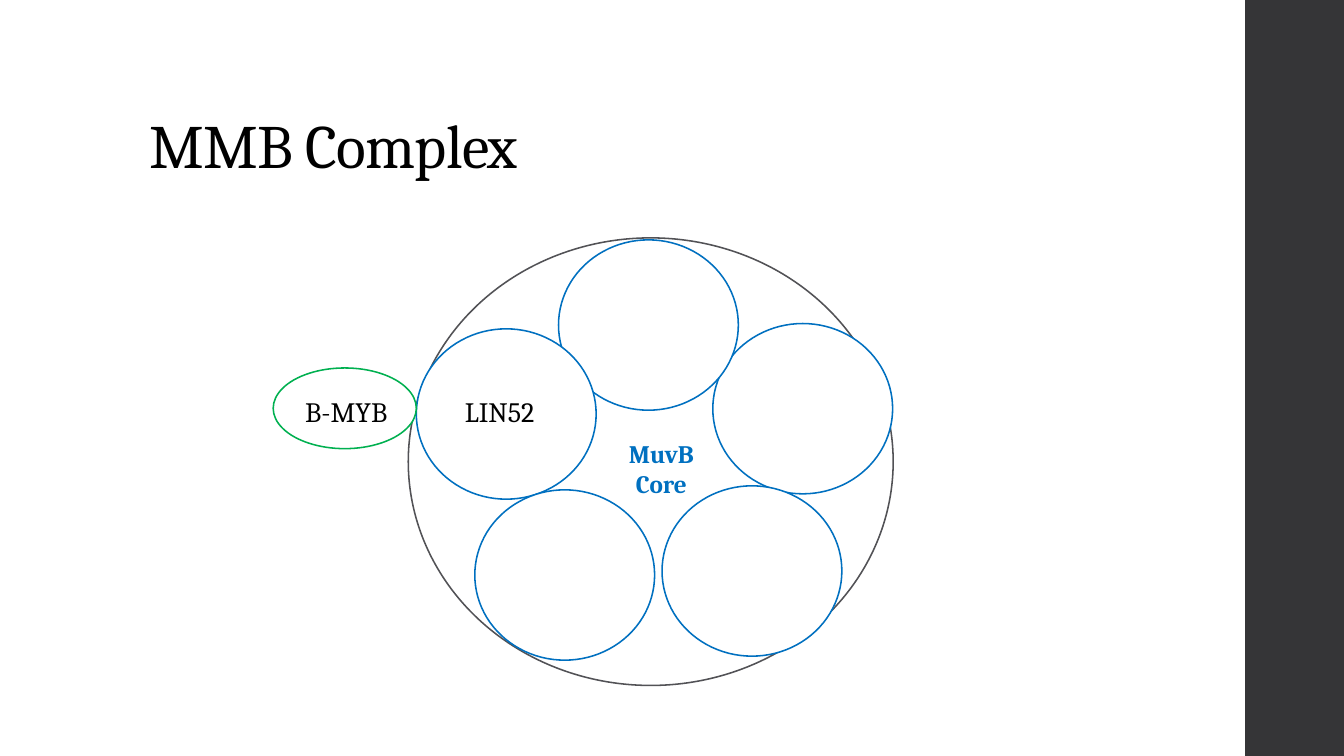
from pptx import Presentation
from pptx import util as u
from pptx.dml.color import RGBColor
from pptx.enum import shapes, text

BLACK, WHITE, BLUE, GREEN = "000000", "FFFFFF", "0070C0", "00B050"
GREY, DARK = "525256", "353537"


def rgb(hex_color):
    return RGBColor.from_string(hex_color)


class Deck:
    """Holds the style and current slide; boxes are (x, y, w, h) in percent of the slide."""

    font = "Cambria"
    line_width = u.Pt(1.1)

    def __init__(self):
        self.prs = Presentation()
        self.prs.slide_width, self.prs.slide_height = u.Inches(13.33), u.Inches(7.5)
        self.s = self.prs.slides.add_slide(self.prs.slide_layouts[5])

    def place(self, box):
        """Turn a percent box into slide lengths."""
        sides = (self.prs.slide_width, self.prs.slide_height) * 2
        return [int(share * side / 100) for share, side in zip(box, sides)]

    def style(self, p, size, color, bold=False):
        for r in p.runs:
            r.font.name, r.font.size, r.font.bold = self.font, u.Pt(size), bold
            r.font.color.rgb = rgb(color)

    def title(self, words, box):
        sp = self.s.shapes.title
        sp.left, sp.top, sp.width, sp.height = self.place(box)
        tf = sp.text_frame
        tf.text = words
        tf.auto_size = text.MSO_AUTO_SIZE.NONE
        tf.vertical_anchor = text.MSO_ANCHOR.BOTTOM
        p = tf.paragraphs[0]
        p.alignment, p.line_spacing = text.PP_ALIGN.LEFT, 0.9
        self.style(p, 44, BLACK)
        p.runs[0].font._element.set("spc", "-50")

    def shape(self, kind, box, fill=None, line=None):
        sp = self.s.shapes.add_shape(kind, *self.place(box))
        sp.shadow.inherit = False
        if fill:
            sp.fill.solid()
            sp.fill.fore_color.rgb = rgb(fill)
        else:
            sp.fill.background()
        if line:
            sp.line.color.rgb = rgb(line)
            sp.line.width = self.line_width
        else:
            sp.line.fill.background()

    def bar(self, box, fill):
        self.shape(shapes.MSO_SHAPE.RECTANGLE, box, fill=fill)

    def oval(self, box, line, fill=WHITE):
        self.shape(shapes.MSO_SHAPE.OVAL, box, fill, line)

    def label(self, words, box, size=20, color=BLACK, bold=False):
        tf = self.s.shapes.add_textbox(*self.place(box)).text_frame
        tf.word_wrap = True
        tf.auto_size = text.MSO_AUTO_SIZE.SHAPE_TO_FIT_TEXT
        tf.text = words
        p = tf.paragraphs[0]
        p.alignment = text.PP_ALIGN.CENTER
        self.style(p, size, color, bold)


def main():
    deck = Deck()
    deck.bar((92.65, 0, 7.5 - 0.15, 100), DARK)
    deck.title("MMB Complex", (10.35, 5.33, 79.5, 19.33))

    deck.oval((30.38, 31.47, 36.08, 59.2), GREY, fill=None)
    subunit_size = (13.38, 22.53)
    subunits = [(53.04, 42.8), (41.56, 31.73), (30.98, 43.5), (49.26, 64.27), (35.33, 64.8)]
    for corner in subunits:
        deck.oval(corner + subunit_size, BLUE)
    deck.label("LIN52", (32.78, 51.47, 8.78, 5.87))

    deck.oval((20.33, 48.67, 10.65, 10.67), GREEN)
    deck.label("B-MYB", (21, 51.47, 9.53, 5.87))
    deck.label("MuvB Core", (45.39, 57.33, 7.65, 9.47), size=18, color=BLUE, bold=True)

    deck.prs.save("out.pptx")


if __name__ == "__main__":
    main()
